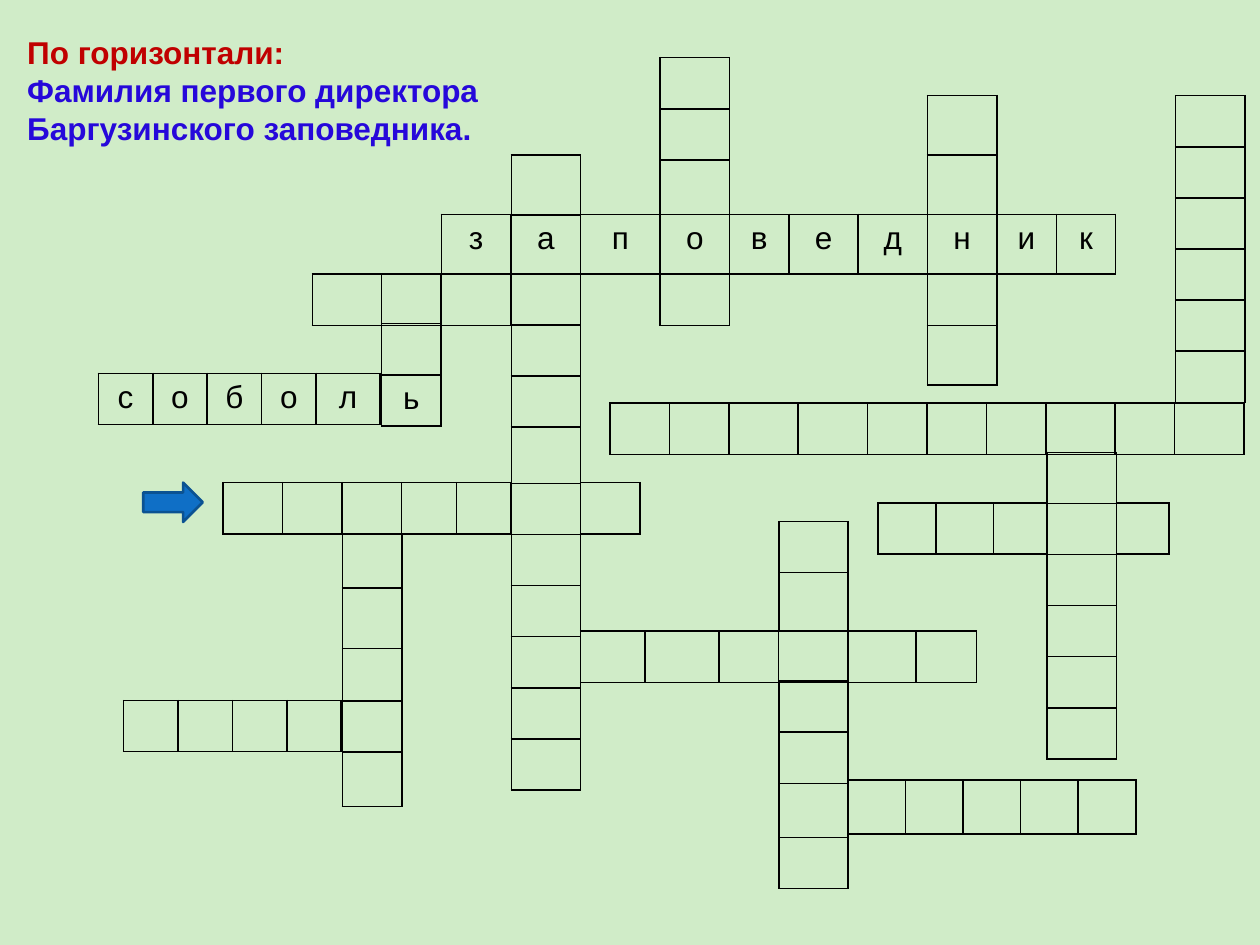
from dataclasses import dataclass
from lxml import etree
from pptx import Presentation
from pptx.dml.color import RGBColor
from pptx.enum.shapes import MSO_SHAPE
from pptx.enum.text import PP_ALIGN
from pptx.oxml.ns import qn
from pptx.util import Pt

ARROW = MSO_SHAPE.RIGHT_ARROW
CENTER = PP_ALIGN.CENTER
FONT = "Arial"
BLACK = "000000"

# Usual cell sizes and shared edges, in points
WIDE, MID, SLIM = 39.6, 34, 31.1
LOW, ROW, TALL = 28.3, 29.2, 34
STEM, WORD, BELOW = 292.2, 122.5, 156.7


@dataclass
class Strip:
    left: float
    top: float
    cols: list[float]
    rows: list[float]
    word: str = ""


@dataclass
class Line:
    text: str
    color: str


STRIPS = [
    # Long column and the cell above it
    Strip(STEM, WORD, [WIDE],
          [TALL, 29, 29, 29, 32.2, 29, 29, 29, 27.9, 29, 29], "а"),
    Strip(STEM, 88.5, [WIDE], [34.5]),
    # Rows and columns on the left
    Strip(178.5, BELOW, [WIDE, MID, WIDE], [LOW]),
    Strip(127.4, 275.8, [MID, MID, MID, 31.5, 30.8], [LOW]),
    Strip(195.7, 305, [MID], [31, 34.6, 30, LOW, 31]),
    Strip(218.1, 185, [MID], [LOW, ROW], "ь"),
    Strip(70.6, 400.3, [SLIM] * 4, [ROW]),
    Strip(56.2, 213.3, [SLIM] * 4 + [36.7], [ROW], "собол"),
    # Main word
    Strip(252.2, WORD, [WIDE], [TALL], "з"),
    Strip(331.8, WORD, [45.4], [TALL], "п"),
    Strip(377.2, WORD, [WIDE], [TALL], "о"),
    Strip(416.8, WORD, [MID] + [WIDE] * 3 + [MID] * 2, [TALL], "ведник"),
    # Columns through the main word
    Strip(377.2, 33, [WIDE], [ROW, ROW, 31.2]),
    Strip(377.2, BELOW, [WIDE], [ROW]),
    Strip(530, 54.7, [WIDE], [TALL, TALL]),
    Strip(530, BELOW, [WIDE], [28.6, TALL]),
    # Rows and columns on the right
    Strip(331.8, 275.8, [MID], [ROW]),
    Strip(331.8, 360.7, [36.7, 42.5, MID, WIDE, 38.9, 34.6], [ROW]),
    Strip(671.8, 54.7, [WIDE], [ROW] * 6),
    Strip(598.3, 258.5, [WIDE], [LOW, 29] + [ROW] * 4),
    Strip(501.8, 287.3, [33, 33, 30.7], [ROW]),
    Strip(637.9, 287.3, [30.2], [ROW]),
    Strip(445, 298.1, [WIDE], [ROW, 33.1]),
    Strip(445, 389.2, [WIDE], [28.8, ROW, 31, ROW]),
    Strip(484.6, 445.7, [32.9] * 5, [31]),
    Strip(348.5, 230.4, [MID] * 2 + [WIDE] * 2 + [MID] * 3
          + [WIDE, MID, WIDE], [28.8]),
]

CLUE = [
    Line("По горизонтали:", "C00000"),
    Line("Фамилия первого директора", "2608DA"),
    Line("Баргузинского заповедника.", "2608DA"),
]


def paint(color, value: str) -> None:
    color.rgb = RGBColor.from_string(value)


def add_run(para, text: str, color: str, bold: bool = False) -> None:
    run = para.add_run()
    run.text = text
    run.font.name = FONT
    run.font.size = Pt(18)
    run.font.bold = bold
    paint(run.font.color, color)


def add_edges(cell) -> None:
    props = cell._tc.get_or_add_tcPr()
    for spot, side in enumerate(("lnL", "lnR", "lnT", "lnB")):
        edge = etree.Element(qn(f"a:{side}"), w=str(Pt(1)))
        fill = etree.SubElement(edge, qn("a:solidFill"))
        etree.SubElement(fill, qn("a:srgbClr"), val=BLACK)
        props.insert(spot, edge)


def draw_strip(slide, strip: Strip) -> None:
    frame = slide.shapes.add_table(
        len(strip.rows), len(strip.cols), Pt(strip.left), Pt(strip.top),
        Pt(sum(strip.cols)), Pt(sum(strip.rows)))
    table = frame.table
    table.first_row = table.horz_banding = False
    for col, width in zip(table.columns, strip.cols):
        col.width = Pt(width)
    for row, height in zip(table.rows, strip.rows):
        row.height = Pt(height)
    cells = list(table.iter_cells())
    for cell in cells:
        cell.fill.background()
        add_edges(cell)
    # A lone letter in a column of two sits in the crossing at its foot
    first = 1 if strip.word == "ь" else 0
    for cell, char in zip(cells[first:], strip.word):
        para = cell.text_frame.paragraphs[0]
        para.alignment = CENTER
        add_run(para, char, BLACK)


def draw_arrow(slide) -> None:
    arrow = slide.shapes.add_shape(
        ARROW, Pt(81.9), Pt(275.8), Pt(34), Pt(22.5))
    arrow.shadow.inherit = False
    arrow.fill.solid()
    paint(arrow.fill.fore_color, "0F6FC6")
    paint(arrow.line.color, "0B5292")
    arrow.line.width = Pt(1.5)


def draw_clue(slide, lines: list[Line]) -> None:
    box = slide.shapes.add_textbox(Pt(8.5), Pt(15.3), Pt(360), Pt(72.7))
    frame = box.text_frame
    frame.word_wrap = True
    for spot, line in enumerate(lines):
        para = frame.add_paragraph() if spot else frame.paragraphs[0]
        add_run(para, line.text, line.color, bold=True)


def main() -> None:
    deck = Presentation()
    deck.slide_width, deck.slide_height = Pt(720), Pt(540)
    slide = deck.slides.add_slide(deck.slide_layouts[6])
    back = slide.background.fill
    back.solid()
    paint(back.fore_color, "D0ECC8")

    for strip in STRIPS:
        draw_strip(slide, strip)
    draw_arrow(slide)
    draw_clue(slide, CLUE)
    deck.save("out.pptx")


if __name__ == "__main__":
    main()
